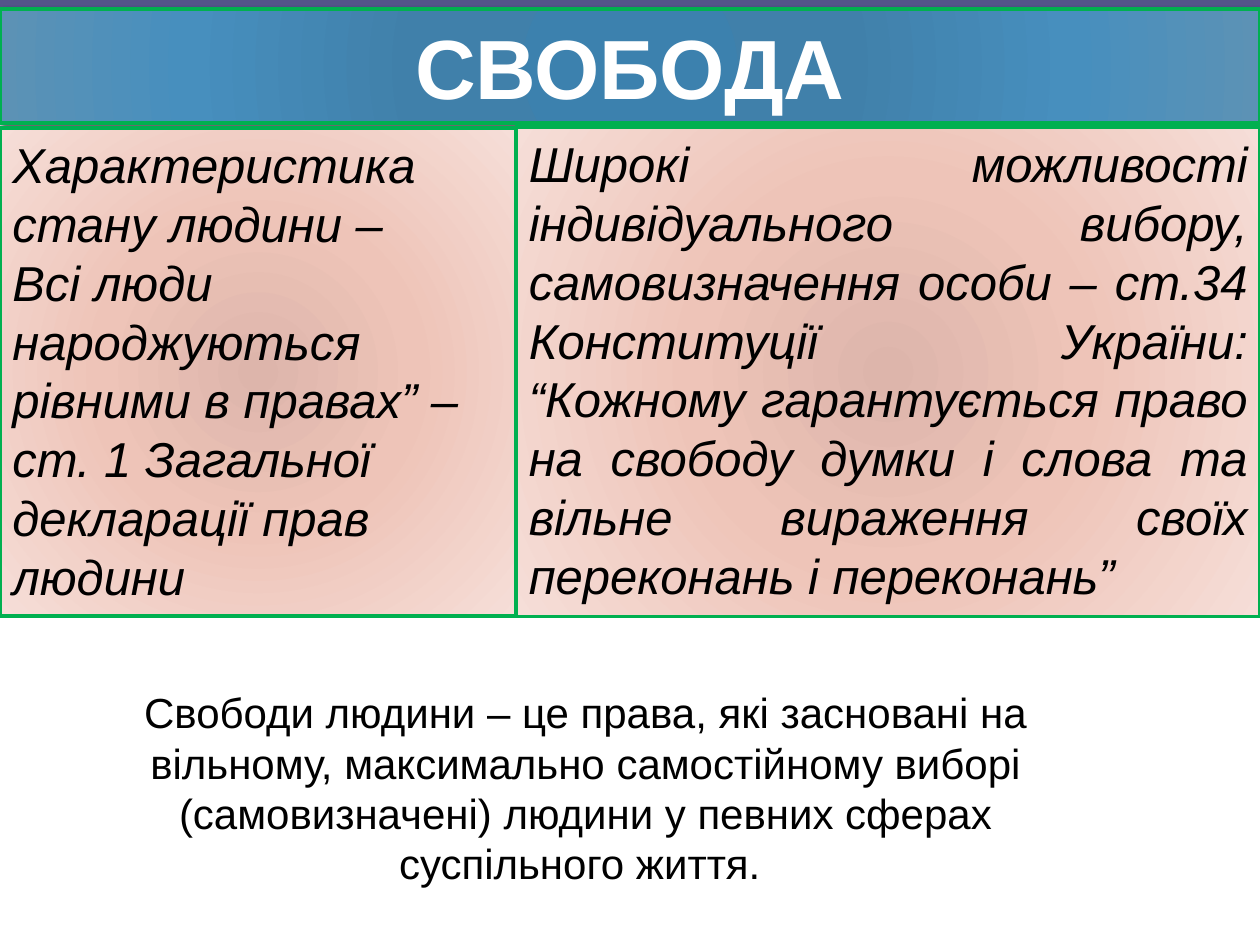
"""Build the slide that defines freedom under a title banner."""
from dataclasses import dataclass
from typing import Optional

from lxml.etree import SubElement
from pptx import Presentation
from pptx.dml.color import RGBColor
from pptx.enum.shapes import MSO_SHAPE as SHAPE
from pptx.enum.text import MSO_ANCHOR as ANCHOR, MSO_AUTO_SIZE as AUTO, PP_ALIGN as ALIGN
from pptx.oxml import parse_xml
from pptx.oxml.ns import nsdecls, qn
from pptx.util import Cm, Pt

WHITE = RGBColor(0xFF, 0xFF, 0xFF)
BLACK = RGBColor(0x00, 0x00, 0x00)
GREEN = RGBColor(0x00, 0xB0, 0x50)
VIOLET = RGBColor(0x53, 0x54, 0x8A)
BLUE_STOPS = (
    (0, RGBColor(0x3C, 0x81, 0xAE)),
    (34, RGBColor(0x40, 0x80, 0xAA)),
    (70, RGBColor(0x47, 0x8F, 0xBE)),
    (100, RGBColor(0x5C, 0x92, 0xB5)),
)
ROSE_STOPS = (
    (0, RGBColor(0xDD, 0xB5, 0xAB)),
    (45, RGBColor(0xEE, 0xC4, 0xB8)),
    (100, RGBColor(0xF6, 0xDE, 0xD8)),
)
WIDTH, HEIGHT = 25.4, 19.05
SPLIT = 10.41


@dataclass
class Block:
    left: float
    top: float
    width: float
    height: float
    paragraphs: tuple[str, ...]
    size: int
    align: ALIGN = ALIGN.LEFT
    color: RGBColor = BLACK
    bold: bool = False
    italic: bool = False
    stops: Optional[tuple] = None
    shadow: bool = False


BLOCKS = (
    Block(0, 0.18, WIDTH, 2.31, ("СВОБОДА",), 48, ALIGN.CENTER, WHITE,
          bold=True, stops=BLUE_STOPS, shadow=True),
    Block(0, 2.59, SPLIT, 9.83,
          ("Характеристика стану людини –",
           "Всі люди народжуються рівними в правах” – ст. 1 Загальної "
           "декларації прав людини"),
          28, italic=True, stops=ROSE_STOPS),
    Block(SPLIT, 2.57, WIDTH - SPLIT, 9.86,
          ("Широкі можливості індивідуального вибору, самовизначення особи – "
           "ст.34 Конституції України: “Кожному гарантується право на свободу "
           "думки і слова та вільне вираження своїх переконань і переконань”",),
          28, ALIGN.JUSTIFY, italic=True, stops=ROSE_STOPS),
    Block(1.3, 13.72, 21.01, 4.37,
          ("Свободи людини – це права, які засновані на вільному, максимально "
           "самостійному виборі (самовизначені) людини у певних сферах "
           "суспільного життя. ",),
          24, ALIGN.CENTER),
)


def fill_radial(sp, stops: tuple) -> None:
    """Fill a shape with a circular gradient."""
    marks = "".join(
        f'<a:gs pos="{pos * 1000}"><a:srgbClr val="{color}"/></a:gs>'
        for pos, color in stops)
    grad = parse_xml(
        f'<a:gradFill {nsdecls("a")} rotWithShape="1"><a:gsLst>{marks}</a:gsLst>'
        '<a:path path="circle"><a:fillToRect l="100000" t="100000" '
        'r="100000" b="100000"/></a:path></a:gradFill>')
    sp._element.spPr.find(qn("a:prstGeom")).addnext(grad)


def add_shadow(sp) -> None:
    """Cast a soft black shadow to the lower right."""
    effects = sp._element.spPr.find(qn("a:effectLst"))
    outer = SubElement(effects, qn("a:outerShdw"), blurRad=str(Pt(3)),
                       dist=str(Pt(2)), dir="2700000", rotWithShape="0")
    color = SubElement(outer, qn("a:srgbClr"), val=str(BLACK))
    SubElement(color, qn("a:alpha"), val="60000")


def add_block(s, block: Block) -> None:
    """Draw one text block, framed when it has gradient stops."""
    box = [Cm(n) for n in (block.left, block.top, block.width, block.height)]
    if block.stops:
        sp = s.shapes.add_shape(SHAPE.RECTANGLE, *box)
        sp.shadow.inherit = False
        fill_radial(sp, block.stops)
        sp.line.color.rgb = GREEN
        sp.line.width = Pt(2.25)
    else:
        sp = s.shapes.add_textbox(*box)
    if block.shadow:
        add_shadow(sp)
    tf = sp.text_frame
    tf.word_wrap = True
    tf.auto_size = AUTO.SHAPE_TO_FIT_TEXT
    tf.vertical_anchor = ANCHOR.TOP
    for i, text in enumerate(block.paragraphs):
        p = tf.add_paragraph() if i else tf.paragraphs[0]
        p.alignment = block.align
        p.font.name = "Arial"
        p.font.size = Pt(block.size)
        p.font.bold = block.bold
        p.font.italic = block.italic
        p.font.color.rgb = block.color
        p.add_run().text = text


def main() -> None:
    """Assemble and save the slide."""
    prs = Presentation()
    prs.slide_width, prs.slide_height = Cm(WIDTH), Cm(HEIGHT)
    s = prs.slides.add_slide(prs.slide_layouts[6])
    strip = s.shapes.add_shape(SHAPE.RECTANGLE, 0, 0, Cm(WIDTH), Cm(1.02))
    strip.shadow.inherit = False
    strip.fill.solid()
    strip.fill.fore_color.rgb = VIOLET
    strip.line.fill.background()
    for block in BLOCKS:
        add_block(s, block)
    prs.save("out.pptx")


if __name__ == "__main__":
    main()
